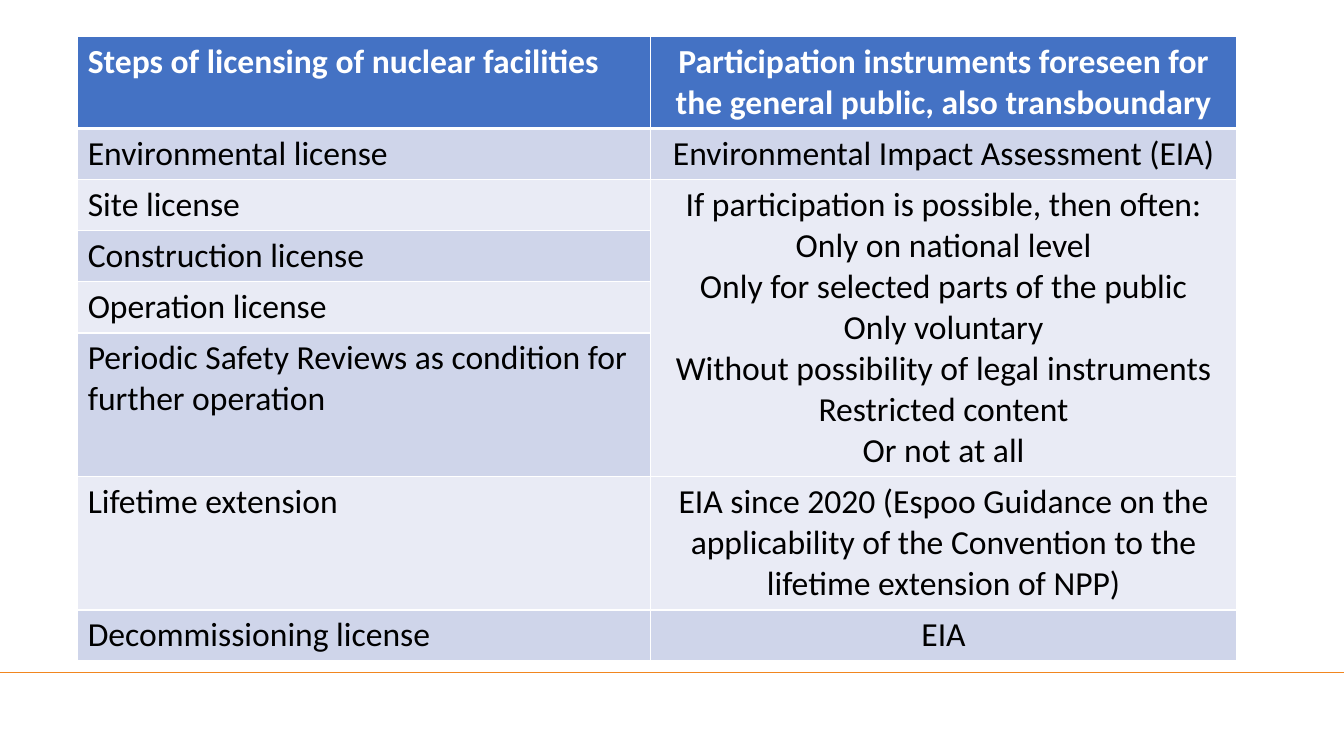
import dataclasses

import lxml.etree
import pptx
import pptx.dml.color
import pptx.enum.shapes
import pptx.enum.text
import pptx.oxml.ns
import pptx.util

Pt = pptx.util.Pt
ALIGN = pptx.enum.text.PP_ALIGN


@dataclasses.dataclass(frozen=True)
class Theme:
    font: str = "Calibri"
    size: float = 24
    header_fill: str = "4472C4"
    dark_band: str = "CFD5EA"
    light_band: str = "E9EBF5"
    white: str = "FFFFFF"
    black: str = "000000"
    accent: str = "F1861F"


THEME = Theme()

COLUMN_WIDTHS = (409, 419)
MERGED_ROWS = (2, 5)
ROWS = (
    (65.8, "Steps of licensing of nuclear facilities",
     ["Participation instruments foreseen for the general public, also transboundary"]),
    (36.5, "Environmental license", ["Environmental Impact Assessment (EIA)"]),
    (36.5, "Site license", [
        "If participation is possible, then often:",
        "Only on national level",
        "Only for selected parts of the public",
        "Only voluntary",
        "Without possibility of legal instruments",
        "Restricted content",
        "Or not at all",
    ]),
    (36.5, "Construction license", []),
    (36.5, "Operation license", []),
    (102.8, "Periodic Safety Reviews as condition for further operation", []),
    (95.1, "Lifetime extension",
     ["EIA since 2020 (Espoo Guidance on the applicability of the Convention "
      "to the lifetime extension of NPP)"]),
    (36.5, "Decommissioning license", ["EIA"]),
)


def rgb(value):
    return pptx.dml.color.RGBColor.from_string(value)


def write_text(text_frame, lines, color=THEME.black, bold=False, align=ALIGN.LEFT):
    for index, line in enumerate(lines):
        paragraph = text_frame.paragraphs[0] if index == 0 else text_frame.add_paragraph()
        paragraph.alignment = align
        run = paragraph.add_run()
        run.text = line
        run.font.name = THEME.font
        run.font.size = Pt(THEME.size)
        run.font.bold = bold
        run.font.color.rgb = rgb(color)


def set_borders(cell, top=1, bottom=1):
    properties = cell._tc.get_or_add_tcPr()
    for side, width in (("L", 1), ("R", 1), ("T", top), ("B", bottom)):
        line = lxml.etree.SubElement(properties, pptx.oxml.ns.qn("a:ln" + side), w=str(Pt(width)))
        fill = lxml.etree.SubElement(line, pptx.oxml.ns.qn("a:solidFill"))
        lxml.etree.SubElement(fill, pptx.oxml.ns.qn("a:srgbClr"), val=THEME.white)


def add_licensing_table(slide, left, top, width, height):
    frame = slide.shapes.add_table(len(ROWS), 2, Pt(left), Pt(top), Pt(width), Pt(height))
    table = frame.table
    for column, column_width in zip(table.columns, COLUMN_WIDTHS):
        column.width = Pt(column_width)
    first, last = MERGED_ROWS
    table.cell(first, 1).merge(table.cell(last, 1))

    for row, (row_height, step, instruments) in enumerate(ROWS):
        table.rows[row].height = Pt(row_height)
        is_header = row == 0
        band = THEME.dark_band if row % 2 else THEME.light_band
        contents = (([step], ALIGN.LEFT), (instruments, ALIGN.CENTER))
        for column, (lines, align) in enumerate(contents):
            cell = table.cell(row, column)
            set_borders(cell, top=3 if row == 1 else 1, bottom=3 if is_header else 1)
            cell.fill.solid()
            cell.fill.fore_color.rgb = rgb(THEME.header_fill if is_header else band)
            write_text(cell.text_frame, lines, bold=is_header, align=align,
                       color=THEME.white if is_header else THEME.black)


def add_footer_rule(slide, left, top, width):
    rule = slide.shapes.add_connector(
        pptx.enum.shapes.MSO_CONNECTOR.STRAIGHT, Pt(left), Pt(top), Pt(left + width), Pt(top))
    rule.line.color.rgb = rgb(THEME.accent)
    rule.line.width = Pt(0.5)
    lxml.etree.SubElement(rule._element.spPr, pptx.oxml.ns.qn("a:effectLst"))


def main():
    presentation = pptx.Presentation()
    presentation.slide_width = Pt(960)
    presentation.slide_height = Pt(540)
    slide = presentation.slides.add_slide(presentation.slide_layouts[6])
    add_footer_rule(slide, 0, 480, 960)
    add_licensing_table(slide, 55.5, 26, sum(COLUMN_WIDTHS), sum(row[0] for row in ROWS))
    presentation.save("out.pptx")


if __name__ == "__main__":
    main()
